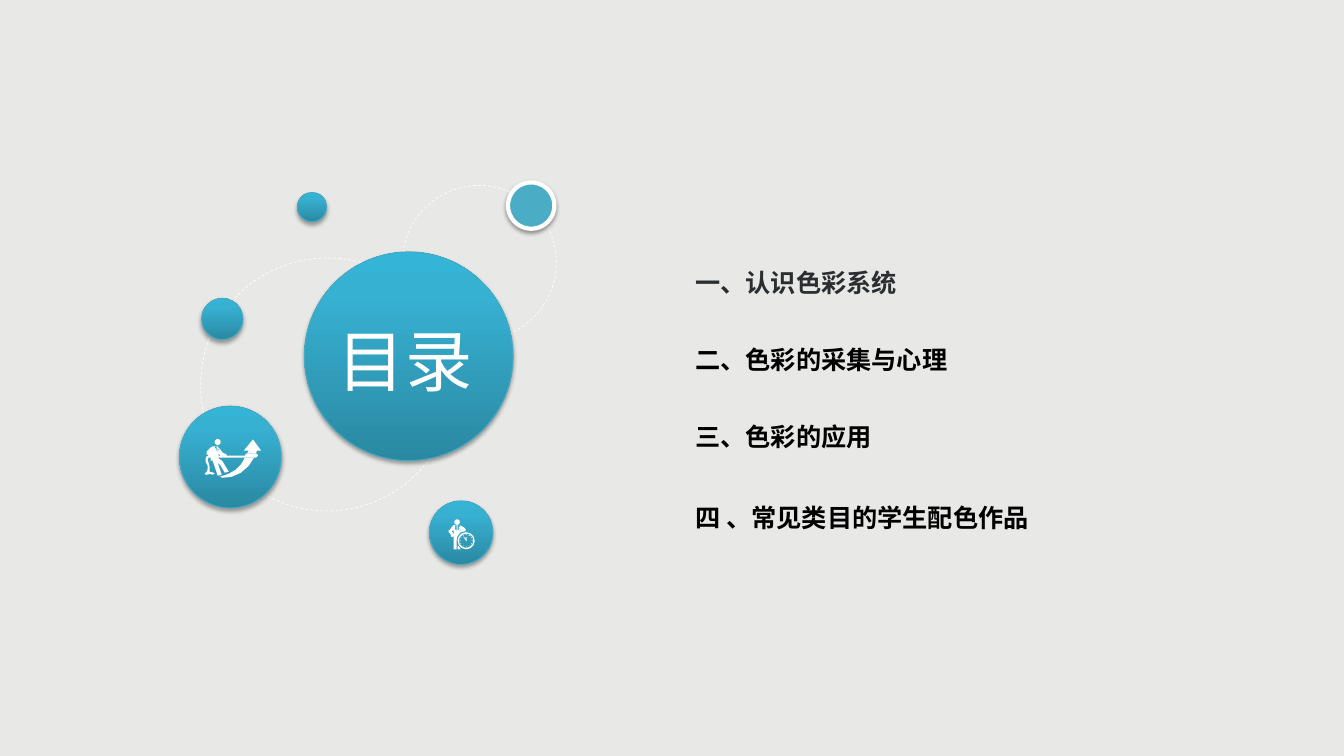
import math
from dataclasses import dataclass

import pptx
import pptx.dml.color
import pptx.enum.dml
import pptx.enum.shapes
import pptx.enum.text
import pptx.oxml
import pptx.oxml.ns
import pptx.shapes.autoshape
import pptx.shapes.shapetree
import pptx.slide
import pptx.util

Pt = pptx.util.Pt
Point = tuple[float, float]
Canvas = pptx.shapes.shapetree.SlideShapes | pptx.shapes.shapetree.GroupShapes
Shape = pptx.shapes.autoshape.Shape


@dataclass(frozen=True)
class Theme:
    background: str = "E8E8E6"
    white: str = "FFFFFF"
    black: str = "000000"
    charcoal: str = "2B2E30"
    flat_teal: str = "4BACC6"
    rim: str = "46AAC5"
    gradient: tuple = ((0, "2A88A2"), (80, "37B1D2"), (100, "34B4D6"))
    font: str = "Noto Sans CJK SC"
    title_size: float = 48
    item_size: float = 18


@dataclass(frozen=True)
class Circle:
    left: float
    top: float
    size: float


@dataclass(frozen=True)
class Label:
    text: str
    left: float
    top: float
    width: float
    height: float
    size: float
    color: str
    bold: bool = True
    align: pptx.enum.text.PP_ALIGN = pptx.enum.text.PP_ALIGN.LEFT


THEME = Theme()
GRID = 0.72  # points per icon grid unit

ORBITS = [Circle(287.28, 132.48, 110.16), Circle(143.28, 184.32, 180.72)]
DISCS = [
    Circle(217.44, 180, 149.04), Circle(306.72, 357.84, 45.36), Circle(144, 213.12, 29.52),
    Circle(212.4, 137.52, 20.88), Circle(128.16, 290.16, 72.72),
]
RINGED_DISC = Circle(362.88, 130.32, 33.12)

TITLE = Label("目录", 227.52, 224.64, 123.84, 65.52, THEME.title_size, THEME.white, False,
              pptx.enum.text.PP_ALIGN.CENTER)
ITEMS = [
    Label(text, 489.6, top, width, 28.8, THEME.item_size, color)
    for text, top, width, color in [
        ("一、认识色彩系统", 187.2, 220.32, THEME.charcoal),
        ("二、色彩的采集与心理", 242.64, 226.8, THEME.black),
        ("三、色彩的应用", 297.36, 264.96, THEME.black),
        ("四 、常见类目的学生配色作品", 354.96, 276.48, THEME.black),
    ]
]

# Icon outlines, in grid units; later contours of a list cut holes
CLOCK_MAN = [
    [(462, 527), (462, 525), (461, 524), (460, 523), (458, 522), (456, 521), (457, 522),
     (455, 523), (456, 524), (454, 527), (454, 521), (453, 521), (453, 527), (451, 524),
     (452, 523), (451, 522), (452, 521), (450, 521), (449, 522), (446, 526), (445, 526),
     (445, 528), (446, 529), (447, 530), (448, 533), (450, 532), (450, 545), (453, 545),
     (453, 536), (454, 532), (457, 528)],
    [(457, 526), (457, 525), (458, 526), (456, 527), (455, 527)],
    [(450, 530), (449, 529), (449, 528), (448, 527), (450, 526)],
]
CLOCK_MAN_LEG = [[(454, 541), (454, 545), (457, 545), (456, 543)]]
CLOCK_HANDS = [[(463, 536), (463, 533), (462, 533), (462, 535), (460, 532), (460, 533), (462, 536)]]
CLOCK_CENTER = (462.5, 536.5)

SWOOSH = [[(243, 454), (239, 461), (234, 466), (227, 470), (218, 473), (221, 474), (230, 473),
           (239, 469), (247, 462), (252, 454)]]
ARROW_TIP = [[(245, 450), (254, 450), (255, 447), (259, 447), (251, 436), (242, 447), (247, 447)]]
PULLING_MAN = [
    [(255, 450), (244, 450), (243, 452), (225, 452), (225, 451), (221, 449), (217, 444),
     (216, 444), (217, 446), (216, 449), (216, 442), (215, 442), (215, 449), (214, 445),
     (213, 444), (214, 443), (211, 443), (209, 444), (207, 446), (205, 448), (205, 451),
     (206, 451), (207, 452), (205, 453), (204, 455), (204, 458), (206, 462), (206, 466),
     (205, 468), (203, 470), (204, 471), (206, 471), (208, 470), (211, 471), (213, 470),
     (212, 469), (208, 468), (208, 463), (207, 459), (206, 456), (207, 454), (209, 454),
     (209, 457), (211, 457), (216, 472), (220, 471), (216, 459), (219, 462), (223, 469),
     (227, 468), (221, 458), (219, 456), (217, 455), (217, 454), (254, 454), (256, 452)],
    [(217, 452), (217, 450), (218, 451), (219, 452)],
]


def rgb(color: str) -> pptx.dml.color.RGBColor:
    return pptx.dml.color.RGBColor.from_string(color)


def add_circle(canvas: Canvas, circle: Circle, fill: str | None = None,
               kind: pptx.enum.shapes.MSO_SHAPE = pptx.enum.shapes.MSO_SHAPE.OVAL) -> Shape:
    shape = canvas.add_shape(kind, Pt(circle.left), Pt(circle.top), Pt(circle.size), Pt(circle.size))
    paint(shape, fill)
    return shape


def paint(shape: Shape, fill: str | None) -> None:
    shape.shadow.inherit = False
    shape.line.fill.background()
    if fill is None:
        shape.fill.background()
    else:
        shape.fill.solid()
        shape.fill.fore_color.rgb = rgb(fill)


def set_line(shape: Shape, color: str, width: float) -> None:
    shape.line.color.rgb = rgb(color)
    shape.line.width = Pt(width)


def add_shadow(shape: Shape, opacity: int, distance: float) -> None:
    effects = shape._element.spPr.find(pptx.oxml.ns.qn("a:effectLst"))
    effects.append(pptx.oxml.parse_xml(
        f'<a:outerShdw {pptx.oxml.ns.nsdecls("a")} blurRad="{Pt(3.1)}" dist="{Pt(distance)}" '
        f'dir="5400000" rotWithShape="0"><a:srgbClr val="{THEME.black}">'
        f'<a:alpha val="{opacity * 1000}"/></a:srgbClr></a:outerShdw>'))


def add_gradient_disc(canvas: Canvas, circle: Circle) -> None:
    disc = add_circle(canvas, circle)
    disc.fill.gradient()
    disc.fill.gradient_angle = 90
    stops = disc._element.spPr.find(".//" + pptx.oxml.ns.qn("a:gsLst"))
    stops[:] = [pptx.oxml.parse_xml(
        f'<a:gs {pptx.oxml.ns.nsdecls("a")} pos="{position * 1000}"><a:srgbClr val="{color}"/></a:gs>')
        for position, color in THEME.gradient]
    set_line(disc, THEME.rim, 0.75)
    add_shadow(disc, 35, 1.8)


def add_outline(canvas: Canvas, contours: list[list[Point]]) -> None:
    builder = canvas.build_freeform(*contours[0][0], scale=float(Pt(GRID)))
    for number, contour in enumerate(contours):
        if number:
            builder.move_to(*contour[0])
        builder.add_line_segments(contour[1:], close=True)
    paint(builder.convert_to_shape(), THEME.white)


def add_dot(canvas: Canvas, center: Point, size: float) -> None:
    left, top = ((value - size / 2) * GRID for value in center)
    add_circle(canvas, Circle(left, top, size * GRID), THEME.white)


def add_clock_icon(page: pptx.slide.Slide) -> None:
    icon = page.shapes.add_group_shape().shapes
    add_dot(icon, (453.5, 518), 5.5)
    for outline in (CLOCK_MAN, CLOCK_MAN_LEG, CLOCK_HANDS):
        add_outline(icon, outline)
    x, y = CLOCK_CENTER
    face = Circle((x - 8.5) * GRID, (y - 8.5) * GRID, 17 * GRID)
    rim = add_circle(icon, face, THEME.white, pptx.enum.shapes.MSO_SHAPE.DONUT)
    rim.adjustments[0] = 0.08
    for hour in range(12):
        angle = math.radians(30 * hour)
        add_dot(icon, (x + 6 * math.cos(angle), y + 6 * math.sin(angle)), 1)
    add_dot(icon, CLOCK_CENTER, 1)


def add_growth_icon(page: pptx.slide.Slide) -> None:
    icon = page.shapes.add_group_shape().shapes
    add_dot(icon, (216, 438.5), 6)
    for outline in (SWOOSH, ARROW_TIP, PULLING_MAN):
        add_outline(icon, outline)


def add_label(page: pptx.slide.Slide, label: Label) -> None:
    box = page.shapes.add_textbox(Pt(label.left), Pt(label.top), Pt(label.width), Pt(label.height))
    box.text_frame.word_wrap = True
    para = box.text_frame.paragraphs[0]
    para.alignment = label.align
    span = para.add_run()
    span.text = label.text
    span.font.size = Pt(label.size)
    span.font.bold = label.bold
    span.font.color.rgb = rgb(label.color)
    span.font.name = THEME.font
    span.font._element.append(pptx.oxml.parse_xml(
        f'<a:ea {pptx.oxml.ns.nsdecls("a")} typeface="{THEME.font}"/>'))


def main() -> None:
    deck = pptx.Presentation()
    deck.slide_width, deck.slide_height = Pt(960), Pt(540)
    page = deck.slides.add_slide(deck.slide_layouts[6])
    page.background.fill.solid()
    page.background.fill.fore_color.rgb = rgb(THEME.background)

    # Dashed orbits behind the discs
    for circle in ORBITS:
        orbit = add_circle(page.shapes, circle)
        set_line(orbit, THEME.white, 0.5)
        orbit.line.dash_style = pptx.enum.dml.MSO_LINE.DASH

    # Discs
    for circle in DISCS:
        add_gradient_disc(page.shapes, circle)
    ringed = add_circle(page.shapes, RINGED_DISC, THEME.flat_teal)
    set_line(ringed, THEME.white, 3)
    add_shadow(ringed, 38, 1.6)

    # Icons
    add_clock_icon(page)
    add_growth_icon(page)

    # Title and contents
    for label in [TITLE, *ITEMS]:
        add_label(page, label)

    deck.save("out.pptx")


if __name__ == "__main__":
    main()
